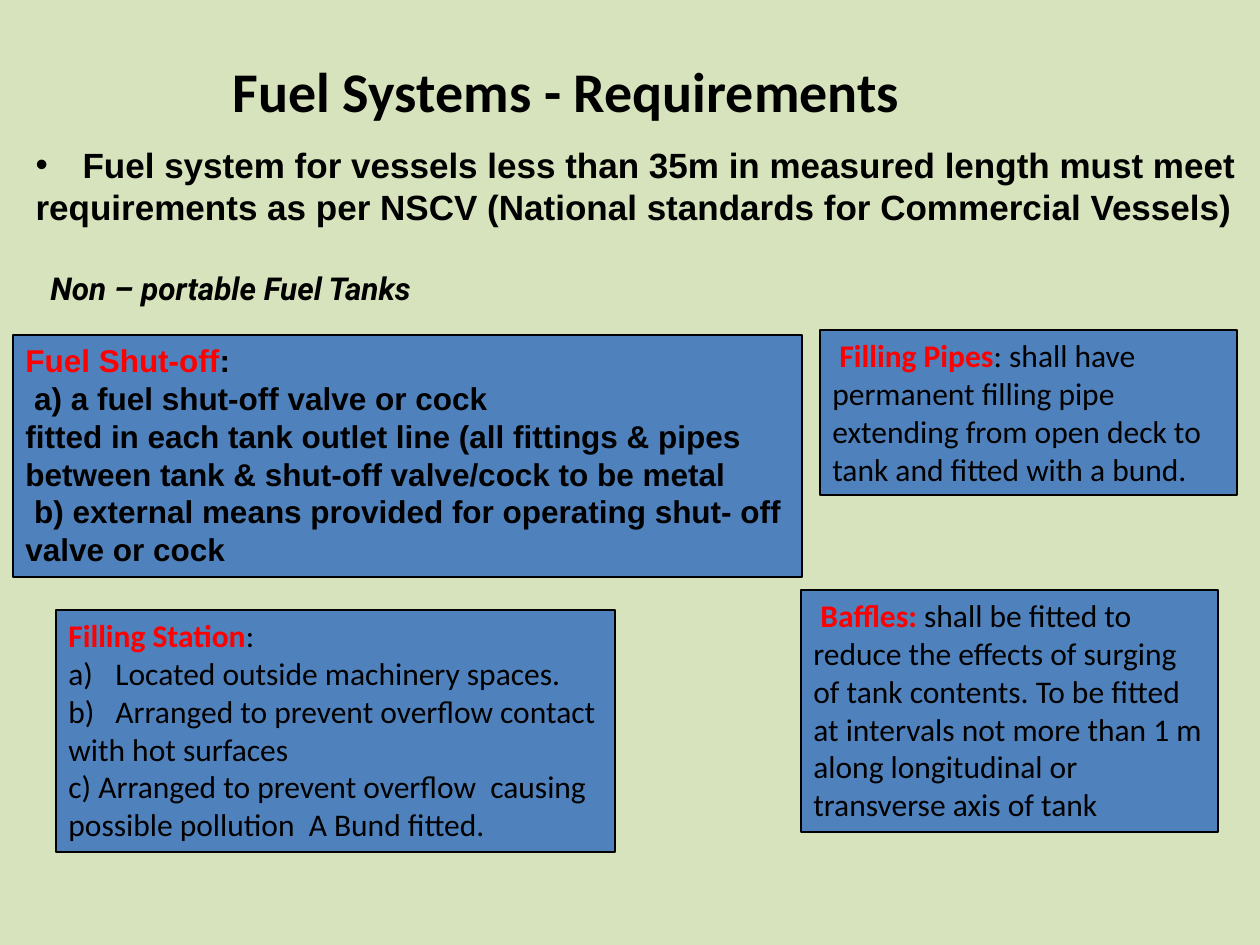
from lxml.etree import SubElement
from pptx import Presentation
from pptx.dml.color import RGBColor
from pptx.enum.shapes import MSO_SHAPE as Shape
from pptx.enum.text import MSO_ANCHOR as Anchor, MSO_AUTO_SIZE as AutoSize, PP_ALIGN as Align
from pptx.oxml.ns import qn
from pptx.util import Emu, Pt

SCALE = 914400 / 126
COLORS = {"background": "D6E3BC", "box": "4F81BD", "text": "000000", "heading": "FF0000"}
HEADING = {"color": "heading", "bold": True}


def px(length):
    """Turn pixels into EMU."""
    return Emu(round(length * SCALE))


def color_of(name):
    """Look up a named colour."""
    return RGBColor.from_string(COLORS[name])


def add_text(paragraph, text, font="Calibri", size=18, color="text", bold=False, italic=False):
    """Add one formatted run to a paragraph."""
    run = paragraph.add_run()
    run.text = text
    run.font.name = font
    run.font.size = Pt(size)
    run.font.bold = bold
    run.font.italic = italic
    run.font.color.rgb = color_of(color)


def set_bullet(paragraph, kind=None, **attributes):
    """Give a paragraph a hanging bullet or number, or none."""
    properties = paragraph._p.get_or_add_pPr()
    indent = px(47) if kind else 0
    properties.set("marL", str(indent))
    properties.set("indent", str(-indent))
    if kind:
        bullet_color = SubElement(properties, qn("a:buClr"))
        SubElement(bullet_color, qn("a:srgbClr"), val=COLORS["text"])
        SubElement(properties, qn("a:buFont"), typeface="Arial")
    SubElement(properties, qn(f"a:{kind or 'buNone'}"), **attributes)


def place(shape, left, top, width, height):
    """Set the position and size of a shape."""
    shape.left, shape.top, shape.width, shape.height = map(px, (left, top, width, height))


def fill_frame(shape, paragraphs, **base):
    """Write paragraphs, each a list of (text, format) runs, into a shape."""
    frame = shape.text_frame
    frame.word_wrap = True
    frame.auto_size = AutoSize.NONE
    frame.vertical_anchor = Anchor.TOP
    for index, runs in enumerate(paragraphs):
        paragraph = frame.add_paragraph() if index else frame.paragraphs[0]
        paragraph.alignment = Align.LEFT
        paragraph.space_before = Pt(0)
        for text, changes in runs:
            add_text(paragraph, text, **{**base, **changes})
    return frame.paragraphs


def add_box(slide, bounds, paragraphs, **base):
    """Add a filled, outlined box of text."""
    shape = slide.shapes.add_shape(Shape.RECTANGLE, *map(px, bounds))
    shape.shadow.inherit = False
    shape.fill.solid()
    shape.fill.fore_color.rgb = color_of("box")
    shape.line.color.rgb = color_of("text")
    shape.line.width = Pt(0.75)
    return fill_frame(shape, paragraphs, **base)


def plain(*lines):
    """Make one unchanged run per line."""
    return [[(line, {})] for line in lines]


def add_headings(slide):
    """Fill the title and body placeholders and add the subheading."""
    title, body = slide.placeholders
    place(title, 220, 50, 698, 81)
    fill_frame(title, plain("Fuel Systems - Requirements"), size=32, bold=True)

    place(body, 23, 137, 1231, 97)
    bullet, continuation = fill_frame(body, plain(
        "Fuel system for vessels less than 35m in measured length must meet",
        "requirements as per NSCV (National standards for Commercial Vessels)",
    ), font="Arial", size=20, bold=True)
    set_bullet(bullet, "buChar", char="•")
    set_bullet(continuation)

    subheading = slide.shapes.add_textbox(*map(px, (38, 263, 554, 50)))
    fill_frame(subheading, plain("Non – portable Fuel Tanks"),
               font="Roboto", bold=True, italic=True)


def add_requirements(slide):
    """Add the four requirement boxes."""
    add_box(slide, (13, 335, 789, 242), [
        [("Fuel Shut-off", HEADING), (":", {})],
        *plain(
            " a) a fuel shut-off valve or cock",
            "fitted in each tank outlet line (all fittings & pipes",
            "between tank & shut-off valve/cock to be metal",
            " b) external means provided for operating shut- off",
            "valve or cock",
        ),
    ], font="Arial", bold=True)

    add_box(slide, (820, 330, 417, 165), [[
        (" ", {}), ("Filling Pipes", HEADING),
        (": shall have permanent filling pipe extending from open deck to "
         "tank and fitted with a bund.", {}),
    ]])

    station = add_box(slide, (56, 610, 559, 242), [
        [("Filling Station", HEADING), (":", {})],
        *plain(
            "Located outside machinery spaces.",
            "Arranged to prevent overflow contact",
            "with hot surfaces",
            "c) Arranged to prevent overflow  causing",
            "possible pollution  A Bund fitted.",
        ),
    ])
    for paragraph in station[1:3]:
        set_bullet(paragraph, "buAutoNum", type="alphaLcParenR")

    add_box(slide, (801, 590, 417, 242), [[
        (" ", {}), ("Baffles: ", HEADING),
        ("shall be fitted to reduce the effects of surging of tank contents. "
         "To be fitted at intervals not more than 1 m along longitudinal or "
         "transverse axis of tank", {}),
    ]])


def main():
    """Build and save the slide."""
    presentation = Presentation()
    presentation.slide_width, presentation.slide_height = px(1260), px(945)
    slide = presentation.slides.add_slide(presentation.slide_layouts[1])
    slide.background.fill.solid()
    slide.background.fill.fore_color.rgb = color_of("background")
    add_headings(slide)
    add_requirements(slide)
    presentation.save("out.pptx")


if __name__ == "__main__":
    main()
